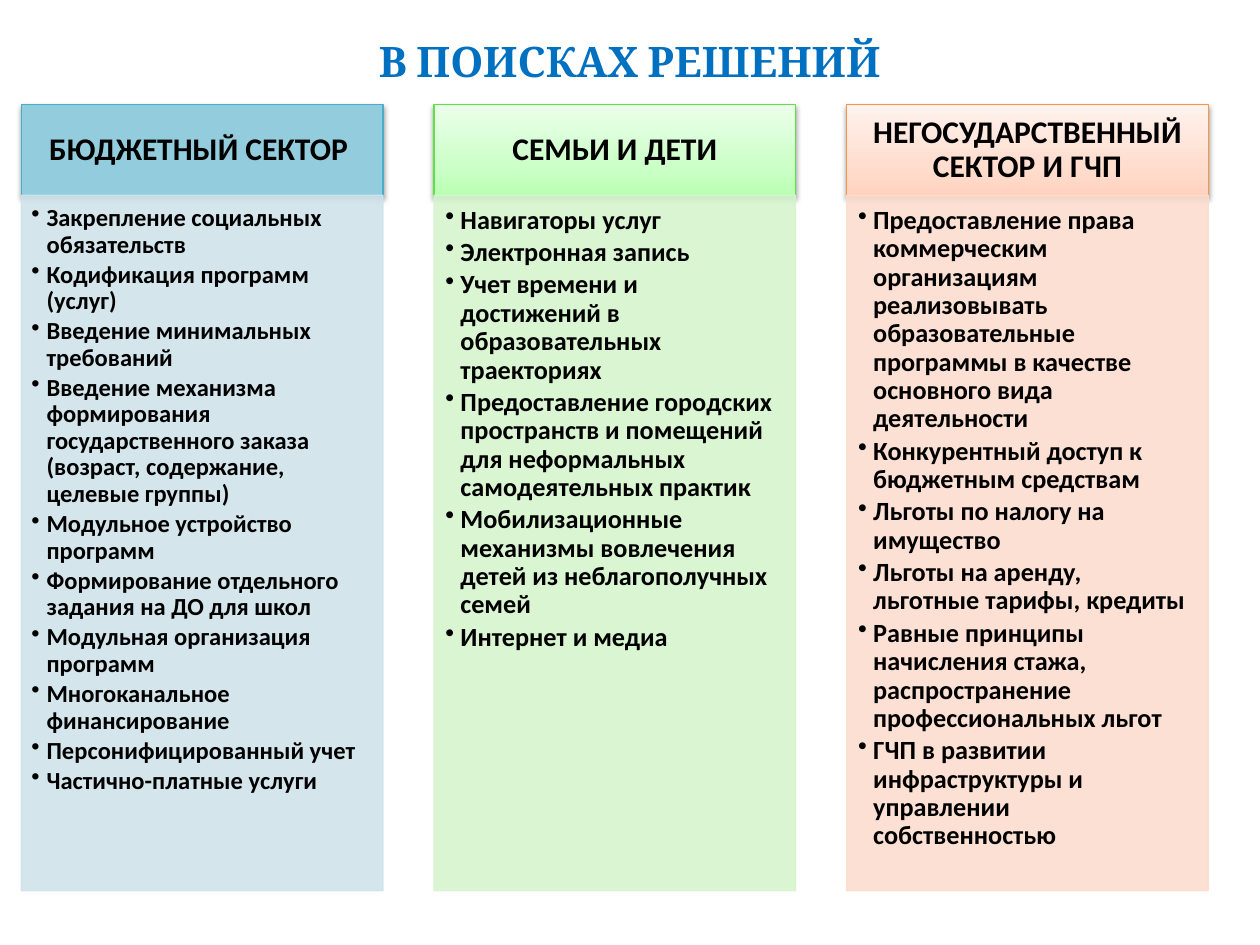
from lxml import etree
from pptx import Presentation
from pptx.dml.color import RGBColor
from pptx.enum.shapes import MSO_SHAPE
from pptx.enum.text import MSO_ANCHOR, PP_ALIGN
from pptx.oxml.ns import qn
from pptx.util import Inches, Pt

RECTANGLE = MSO_SHAPE.RECTANGLE
MIDDLE, TOP = MSO_ANCHOR.MIDDLE, MSO_ANCHOR.TOP
CENTER, LEFT = PP_ALIGN.CENTER, PP_ALIGN.LEFT

BLACK = RGBColor(0x00, 0x00, 0x00)
TITLE_BLUE = RGBColor(0x00, 0x70, 0xC0)
BLUE = RGBColor(0x93, 0xCD, 0xDD)
BLUE_LINE = RGBColor(0x4B, 0xAC, 0xC6)
BLUE_PALE = RGBColor(0xD0, 0xE3, 0xEA)
GREENS = (RGBColor(0xB9, 0xFF, 0xB2), RGBColor(0xCD, 0xFF, 0xC9), RGBColor(0xEC, 0xFF, 0xEA))
GREEN_LINE = RGBColor(0x60, 0xE1, 0x46)
GREEN_PALE = RGBColor(0xD6, 0xF4, 0xCE)
ORANGES = (RGBColor(0xFF, 0xD2, 0xBD), RGBColor(0xFF, 0xDE, 0xD0), RGBColor(0xFF, 0xF2, 0xED))
ORANGE_LINE = RGBColor(0xF7, 0x96, 0x46)
ORANGE_PALE = RGBColor(0xFC, 0xDD, 0xCF)

GRADIENT_POSITIONS = (0, 35, 100)
COLUMN_LEFT, COLUMN_STEP, COLUMN_WIDTH = 0.17, 3.275, 2.87
HEADER_TOP, HEADER_HEIGHT = 0.83, 0.73
BODY_TOP, BODY_HEIGHT = 1.55, 5.52
HEADER_MARGINS = (0.14, 0.08, 0.14, 0.08)

# heading, header colours, header line, body colour, font size, body margins, items
COLUMNS = [
    ("БЮДЖЕТНЫЙ СЕКТОР ", (BLUE,), BLUE_LINE, BLUE_PALE, 14, (0.08, 0.08, 0.11, 0.12), [
        "Закрепление социальных обязательств",
        "Кодификация программ (услуг)",
        "Введение минимальных требований",
        "Введение механизма формирования государственного заказа "
        "(возраст, содержание, целевые группы)",
        "Модульное устройство программ",
        "Формирование отдельного задания на ДО для школ",
        "Модульная организация программ",
        "Многоканальное финансирование",
        "Персонифицированный учет",
        "Частично-платные услуги",
    ]),
    ("СЕМЬИ И ДЕТИ", GREENS, GREEN_LINE, GREEN_PALE, 15, (0.09, 0.09, 0.12, 0.13), [
        "Навигаторы услуг",
        "Электронная запись",
        "Учет времени и достижений в образовательных траекториях",
        "Предоставление городских пространств и помещений для неформальных "
        "самодеятельных практик",
        "Мобилизационные механизмы вовлечения детей из неблагополучных семей",
        "Интернет и медиа",
    ]),
    ("НЕГОСУДАРСТВЕННЫЙ СЕКТОР И ГЧП", ORANGES, ORANGE_LINE, ORANGE_PALE, 15,
     (0.09, 0.09, 0.12, 0.13), [
        "Предоставление права коммерческим организациям реализовывать "
        "образовательные программы в качестве основного вида деятельности",
        "Конкурентный доступ к бюджетным средствам",
        "Льготы по налогу на имущество",
        "Льготы на аренду, льготные тарифы, кредиты",
        "Равные принципы начисления стажа, распространение профессиональных льгот",
        "ГЧП в развитии инфраструктуры и управлении собственностью",
    ]),
]


def add_color(parent, color, opacity=100):
    element = etree.SubElement(parent, qn("a:srgbClr"), val=str(color))
    if opacity < 100:
        etree.SubElement(element, qn("a:alpha"), val=str(opacity * 1000))


def set_fill(shape, colors):
    """Fill with one solid colour, or with a gradient that rises from the bottom."""
    if len(colors) == 1:
        shape.fill.solid()
        shape.fill.fore_color.rgb = colors[0]
        return
    shape.fill.gradient()
    shape.fill.gradient_angle = 90
    stops = shape._element.spPr.find(".//" + qn("a:gsLst"))
    for stop in list(stops):
        stops.remove(stop)
    for position, color in zip(GRADIENT_POSITIONS, colors):
        add_color(etree.SubElement(stops, qn("a:gs"), pos=str(position * 1000)), color)


def add_shadow(shape):
    effects = shape._element.spPr.find(qn("a:effectLst"))
    shadow = etree.SubElement(effects, qn("a:outerShdw"), blurRad=str(Pt(3.1)),
                              dist=str(Pt(1.6)), dir="5400000", rotWithShape="0")
    add_color(shadow, BLACK, 38)


def add_bullet(paragraph):
    properties = paragraph._p.get_or_add_pPr()
    properties.set("marL", str(Inches(0.12)))
    properties.set("indent", str(Inches(-0.12)))
    etree.SubElement(properties, qn("a:buChar"), char="•")


def write_text(shape, lines, size, font, color, alignment, anchor):
    frame = shape.text_frame
    frame.word_wrap = True
    frame.vertical_anchor = anchor
    frame.text = "\n".join(lines)
    for paragraph in frame.paragraphs:
        paragraph.alignment = alignment
        for run in paragraph.runs:
            run.font.size = Pt(size)
            run.font.name = font
            run.font.bold = True
            run.font.color.rgb = color


def set_spacing(shape, margins, space_after):
    frame = shape.text_frame
    (frame.margin_left, frame.margin_top,
     frame.margin_right, frame.margin_bottom) = map(Inches, margins)
    for paragraph in frame.paragraphs:
        paragraph.line_spacing = 0.9
        paragraph.space_after = Pt(space_after)


def add_panel(slide, left, top, height, colors, line_color):
    shape = slide.shapes.add_shape(RECTANGLE, Inches(left), Inches(top),
                                   Inches(COLUMN_WIDTH), Inches(height))
    set_fill(shape, colors)
    shape.line.color.rgb = line_color
    shape.line.width = Pt(0.75)
    shape.shadow.inherit = False
    return shape


def add_header(slide, left, heading, colors, line_color):
    shape = add_panel(slide, left, HEADER_TOP, HEADER_HEIGHT, colors, line_color)
    add_shadow(shape)
    write_text(shape, [heading], 18, "Calibri", BLACK, CENTER, MIDDLE)
    set_spacing(shape, HEADER_MARGINS, 0.35 * 18)


def add_body(slide, left, items, color, size, margins):
    shape = add_panel(slide, left, BODY_TOP, BODY_HEIGHT, (color,), color)
    for element in shape._element.spPr.iter(qn("a:srgbClr")):
        etree.SubElement(element, qn("a:alpha"), val="90000")
    write_text(shape, items, size, "Calibri", BLACK, LEFT, TOP)
    set_spacing(shape, margins, 0.15 * size)
    for paragraph in shape.text_frame.paragraphs:
        add_bullet(paragraph)


def add_title(slide, text):
    box = slide.shapes.add_textbox(Inches(0.12), Inches(0.21), Inches(9.76), Inches(0.55))
    write_text(box, [text], 24, "Cambria", TITLE_BLUE, CENTER, MIDDLE)


def main():
    presentation = Presentation()
    presentation.slide_width = Inches(10)
    presentation.slide_height = Inches(7.5)
    slide = presentation.slides.add_slide(presentation.slide_layouts[6])
    for index, column in enumerate(COLUMNS):
        heading, colors, line_color, body_color, size, margins, items = column
        left = COLUMN_LEFT + index * COLUMN_STEP
        add_header(slide, left, heading, colors, line_color)
        add_body(slide, left, items, body_color, size, margins)
    add_title(slide, "В ПОИСКАХ РЕШЕНИЙ")
    presentation.save("out.pptx")


if __name__ == "__main__":
    main()
